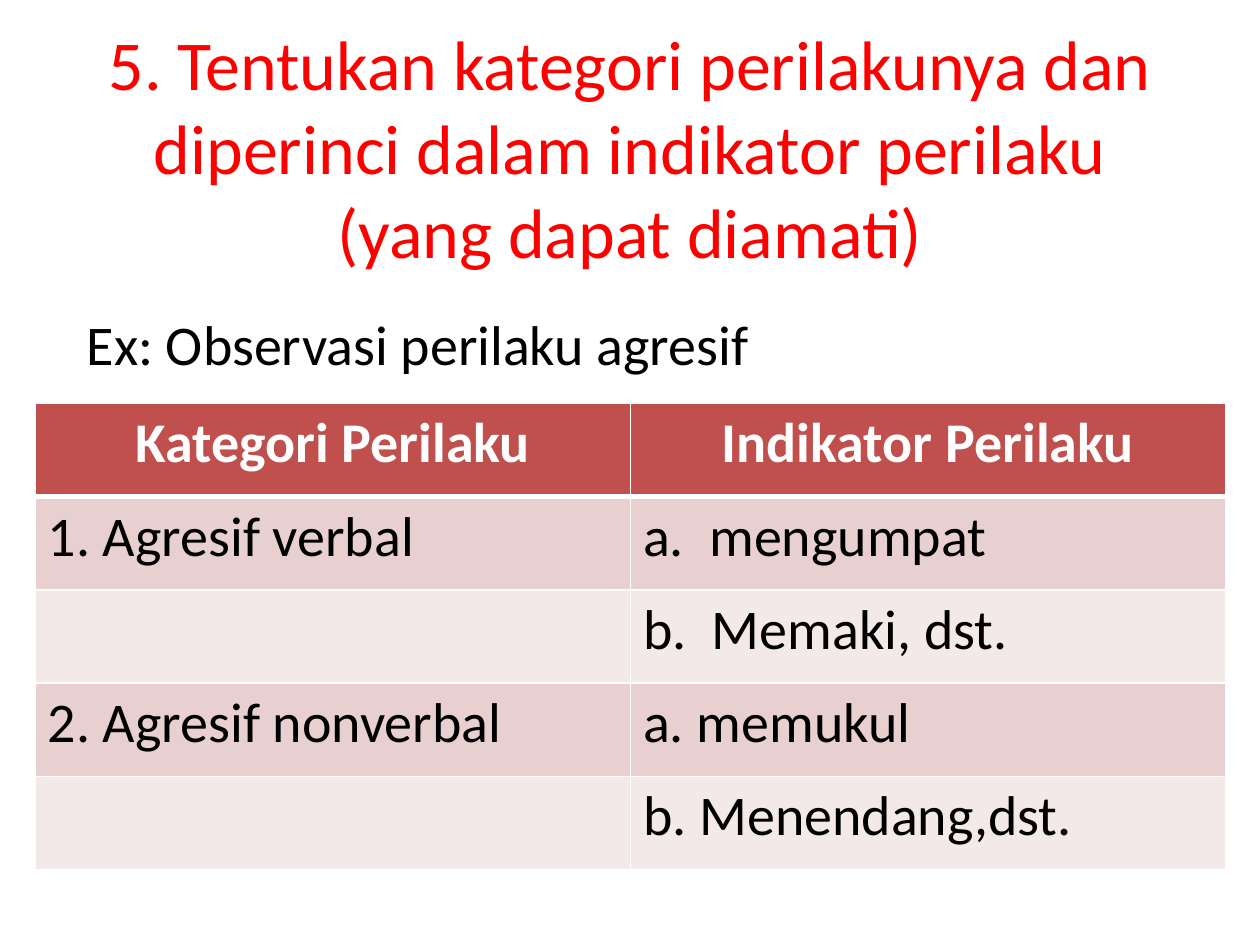
"""Build a slide on behaviour categories and their indicators."""
from pptx import Presentation
from pptx.dml.color import RGBColor as Rgb
from pptx.enum.text import MSO_ANCHOR as Anchor, PP_ALIGN as Align
from pptx.oxml import parse_xml
from pptx.oxml.ns import nsdecls
from pptx.util import Cm, Pt

TITLE = ("5. Tentukan kategori perilakunya dan diperinci dalam "
         "indikator perilaku (yang dapat diamati)")
LEAD = "Ex: Observasi perilaku agresif"
ROWS = [
    ("Kategori Perilaku", "Indikator Perilaku"),
    ("1. Agresif verbal", "a.  mengumpat"),
    ("", "b.  Memaki, dst."),
    ("2. Agresif nonverbal", "a. memukul"),
    ("", "b. Menendang,dst."),
]
HEAD, BANDS = "C0504D", ("F4E9E9", "E8D0D0")
WHITE, BLACK, RED = "FFFFFF", "000000", "FF0000"
COL, ROW = Cm(12), Cm(1.88)


def color(code):
    return Rgb.from_string(code)


def write(frame, text, size, code, align=Align.LEFT, bold=False):
    para = frame.paragraphs[0]
    para.text = text
    para.alignment = align
    for font in [para.font] + [run.font for run in para.runs]:
        font.name, font.size, font.bold = "Calibri", Pt(size), bold
        font.color.rgb = color(code)


def add_text(slide, box, text, size, code, align, anchor):
    frame = slide.shapes.add_textbox(*map(Cm, box)).text_frame
    frame.word_wrap = True
    frame.vertical_anchor = anchor
    write(frame, text, size, code, align)


def add_edge(cell, side, width):
    cell._tc.get_or_add_tcPr().append(parse_xml(
        f'<a:ln{side} {nsdecls("a")} w="{Pt(width)}"><a:solidFill>'
        f'<a:srgbClr val="{WHITE}"/></a:solidFill></a:ln{side}>'))


def add_grid(slide, left, top):
    cols = len(ROWS[0])
    grid = slide.shapes.add_table(
        len(ROWS), cols, left, top, COL * cols, ROW * len(ROWS)).table
    for r, row in enumerate(ROWS):
        head = r == 0
        for c, text in enumerate(row):
            cell = grid.cell(r, c)
            for side in "LRTB":
                thick = (head and side == "B") or (r == 1 and side == "T")
                add_edge(cell, side, 3 if thick else 1)
            cell.fill.solid()
            cell.fill.fore_color.rgb = color(HEAD if head else BANDS[r % 2])
            write(cell.text_frame, text, 32, WHITE if head else BLACK,
                  Align.CENTER if head else Align.LEFT, head)


def main():
    deck = Presentation()
    deck.slide_width, deck.slide_height = Cm(25.4), Cm(19.05)
    slide = deck.slides.add_slide(deck.slide_layouts[6])
    add_text(slide, (1.27, 0, 22.86, 5.92), TITLE, 40, RED,
             Align.CENTER, Anchor.MIDDLE)
    add_text(slide, (1.5, 6.12, 22.63, 11.99), LEAD, 32, BLACK,
             Align.LEFT, Anchor.TOP)
    add_grid(slide, Cm(0.71), Cm(8.13))
    deck.save("out.pptx")


if __name__ == "__main__":
    main()
